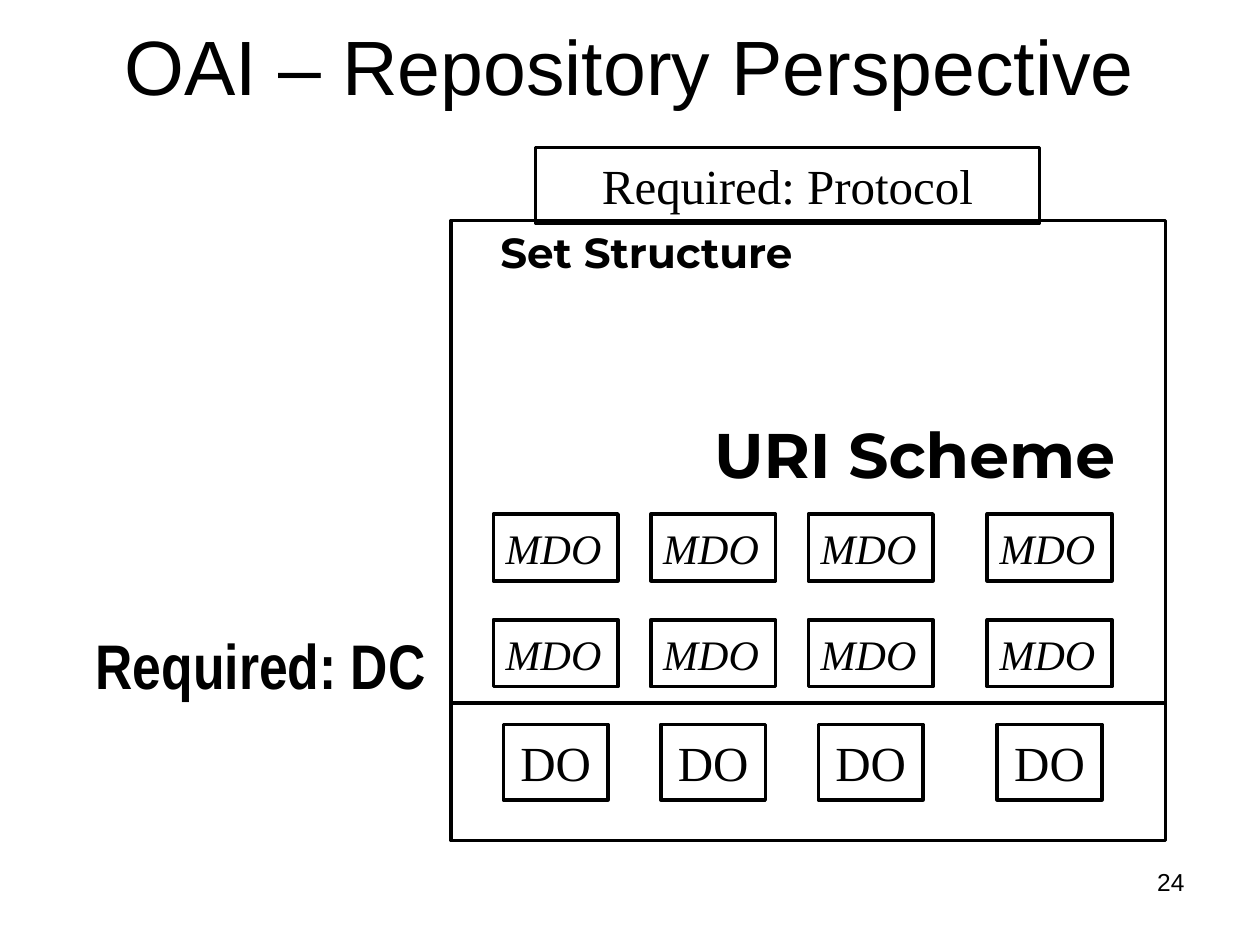
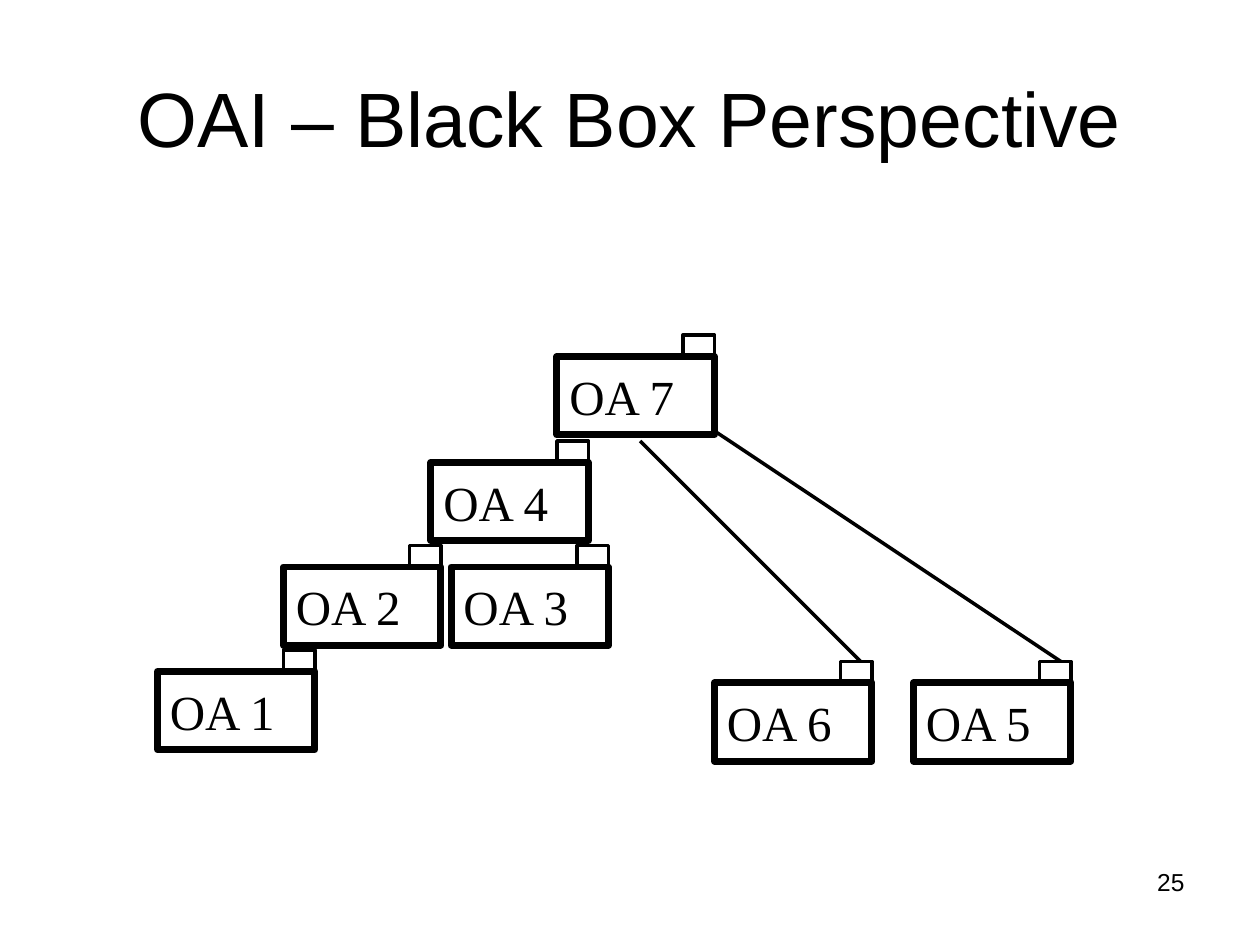
"""Build two OAI slides: the repository perspective and the black box perspective."""
from dataclasses import dataclass

from lxml import etree
from pptx import Presentation
from pptx import util as u
from pptx.dml.color import RGBColor
from pptx.enum import shapes, text
from pptx.oxml import ns

LEFT, CENTER, RIGHT = text.PP_ALIGN.LEFT, text.PP_ALIGN.CENTER, text.PP_ALIGN.RIGHT
TOP, MIDDLE = text.MSO_ANCHOR.TOP, text.MSO_ANCHOR.MIDDLE


@dataclass(frozen=True)
class Theme:
    ink: RGBColor = RGBColor(0, 0, 0)
    sans: str = "Arial"
    serif: str = "Times New Roman"
    narrow: str = "Arial Narrow"
    display: str = "Montserrat"
    title: int = 44
    heading: int = 36
    box: int = 28
    small: int = 24
    number: int = 14
    thin: int = 2
    thick: int = 4
    text_outline: float = 0.75


THEME = Theme()

REPOSITORY = dict(title="OAI – Repository Perspective", title_at=(0.75, 0.17, 8.5, 0.69), number="24")
BLACK_BOX = dict(title="OAI – Black Box Perspective", title_at=(0.5, 0.3, 9, 1.25), number="25")
NUMBER_AT = (7.17, 6.83, 2.33, 0.52)

REPOSITORY_FRAME = (3.58, 1.75, 5.67, 4.92)
PROTOCOL = ("Required: Protocol", (4.25, 1.17, 4, 0.6))
OBJECT_CENTERS = (4.41, 5.66, 6.91, 8.33)
OBJECT_ROWS = [
    ("MDO", 4.08, (0.99, 0.53), dict(size=THEME.small, italic=True, align=LEFT, wrap=False)),
    ("MDO", 4.92, (0.99, 0.53), dict(size=THEME.small, italic=True, align=LEFT, wrap=False)),
    ("DO", 5.75, (0.83, 0.6), dict(size=THEME.box, align=CENTER)),
]
DIVIDER_TOP = 5.58
LABELS = [
    ("Set Structure", (3.92, 1.75, 2.42, 2.11), THEME.display, THEME.small, True),
    ("URI Scheme", (5.58, 3.25, 3.36, 0.71), THEME.display, THEME.heading, True),
    ("Required: DC", (0.75, 4.92, 2.64, 0.62), THEME.narrow, THEME.heading, False),
]

ARCHIVES = {
    "OA 1": (1.25, 5.33), "OA 2": (2.25, 4.5), "OA 4": (3.42, 3.67), "OA 3": (3.58, 4.5),
    "OA 5": (7.25, 5.42), "OA 6": (5.67, 5.42), "OA 7": (4.42, 2.83),
}
ARCHIVE_SIZE = (1.25, 0.62)
TAB_SIZE = (0.25, 0.17)
HARVEST_LINES = [((5.08, 3.5), (6.83, 5.25)), ((5.67, 3.42), (8.42, 5.25))]


def inches(lengths):
    return [u.Inches(length) for length in lengths]


def write(frame, words, font, size, align=CENTER, anchor=MIDDLE, wrap=True,
          bold=False, italic=False, outlined=False):
    frame.auto_size = text.MSO_AUTO_SIZE.NONE
    frame.word_wrap, frame.vertical_anchor = wrap, anchor
    paragraph = frame.paragraphs[0]
    paragraph.alignment = align
    run = paragraph.add_run()
    run.text = words
    run.font.name, run.font.size = font, u.Pt(size)
    run.font.bold, run.font.italic = bold, italic
    run.font.color.rgb = THEME.ink
    if outlined:
        outline = etree.Element(ns.qn("a:ln"), w=str(u.Pt(THEME.text_outline)))
        fill = etree.SubElement(outline, ns.qn("a:solidFill"))
        etree.SubElement(fill, ns.qn("a:srgbClr"), val=str(THEME.ink))
        run.font._element.insert(0, outline)


def add_label(slide, words, at, font, size, **style):
    label = slide.shapes.add_textbox(*inches(at))
    write(label.text_frame, words, font, size, anchor=TOP, **style)


def add_box(parent, at, weight=THEME.thin):
    box = parent.shapes.add_shape(shapes.MSO_SHAPE.RECTANGLE, *inches(at))
    box.shadow.inherit = False
    box.fill.background()
    box.line.color.rgb, box.line.width = THEME.ink, u.Pt(weight)
    return box


def add_line(slide, start, end):
    line = slide.shapes.add_connector(shapes.MSO_CONNECTOR.STRAIGHT, *inches(start + end))
    line.line.color.rgb, line.line.width = THEME.ink, u.Pt(THEME.thin)
    etree.SubElement(line._element.spPr, ns.qn("a:effectLst"))


def add_slide(deck, title, title_at, number):
    slide = deck.slides.add_slide(deck.slide_layouts.get_by_name("Title Only"))
    heading = slide.shapes.title
    heading.left, heading.top, heading.width, heading.height = inches(title_at)
    write(heading.text_frame, title, THEME.sans, THEME.title)
    add_label(slide, number, NUMBER_AT, THEME.sans, THEME.number, align=RIGHT)
    return slide


def build_repository(deck):
    slide = add_slide(deck, **REPOSITORY)
    add_box(slide, REPOSITORY_FRAME)
    protocol, protocol_at = PROTOCOL
    write(add_box(slide, protocol_at).text_frame, protocol, THEME.serif, THEME.box)
    for name, top, (width, height), style in OBJECT_ROWS:
        for center in OBJECT_CENTERS:
            item = add_box(slide, (center - width / 2, top, width, height))
            write(item.text_frame, name, THEME.serif, **style)
    for words, at, font, size, outlined in LABELS:
        add_label(slide, words, at, font, size, wrap=False, bold=True, outlined=outlined)
    left, _, width, _ = REPOSITORY_FRAME
    add_line(slide, (left, DIVIDER_TOP), (left + width, DIVIDER_TOP))


def build_black_box(deck):
    slide = add_slide(deck, **BLACK_BOX)
    width, height = ARCHIVE_SIZE
    tab_width, tab_height = TAB_SIZE
    for name, (left, top) in ARCHIVES.items():
        archive = slide.shapes.add_group_shape()
        body = add_box(archive, (left, top, width, height), THEME.thick)
        write(body.text_frame, name, THEME.serif, THEME.box, align=LEFT)
        add_box(archive, (left + width - tab_width, top - tab_height, tab_width, tab_height))
    for start, end in HARVEST_LINES:
        add_line(slide, start, end)


def main():
    deck = Presentation()
    deck.slide_width, deck.slide_height = inches((10, 7.5))
    build_repository(deck)
    build_black_box(deck)
    deck.save("out.pptx")


if __name__ == "__main__":
    main()
